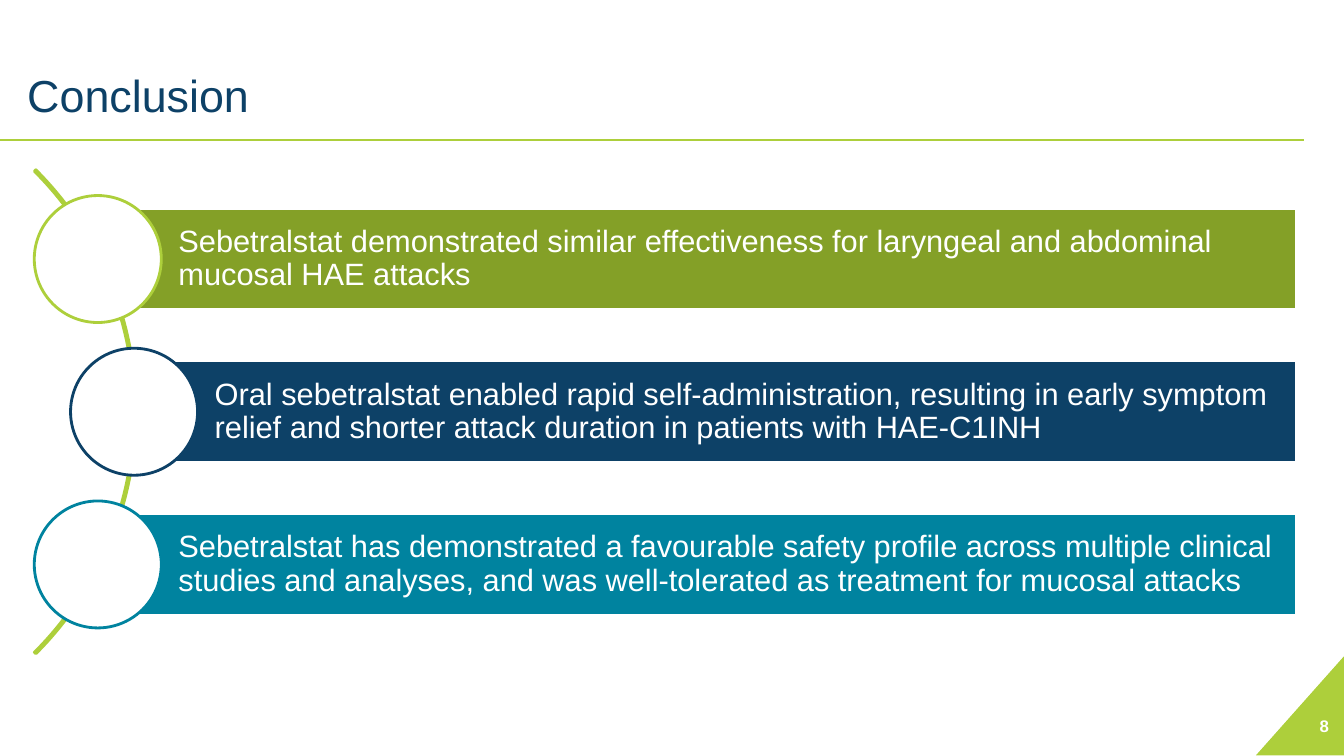
import pptx
import pptx.util
import pptx.dml.color
import pptx.enum.shapes
import pptx.enum.text
from lxml import etree

Inches = pptx.util.Inches
Pt = pptx.util.Pt
MSO_SHAPE = pptx.enum.shapes.MSO_SHAPE
ANCHOR = pptx.enum.text.MSO_ANCHOR
ALIGN = pptx.enum.text.PP_ALIGN

COLOURS = {
    "white": "FFFFFF",
    "lime": "ADCF3B",
    "olive": "84A027",
    "navy": "0D4167",
    "teal": "00839F",
}
CONCLUSIONS = [
    ("Sebetralstat demonstrated similar effectiveness for laryngeal and abdominal "
     "mucosal HAE attacks", 0.97, "olive", "lime"),
    ("Oral sebetralstat enabled rapid self-administration, resulting in early symptom "
     "relief and shorter attack duration in patients with HAE-C1INH", 1.33, "navy", "navy"),
    ("Sebetralstat has demonstrated a favourable safety profile across multiple clinical "
     "studies and analyses, and was well-tolerated as treatment for mucosal attacks",
     0.97, "teal", "teal"),
]
MIDDLE_Y = 4.085
ROW_PITCH = 1.515
BAR_RIGHT = 12.86
BAR_HEIGHT = 1.01
CIRCLE_SIZE = 1.26
ARC_SIZE = 6.79


def rgb(name):
    return pptx.dml.color.RGBColor.from_string(COLOURS[name])


def add_preset(slide, preset, left, top, width, height, fill=None, line=None):
    shape = slide.shapes.add_shape(
        preset, Inches(left), Inches(top), Inches(width), Inches(height))
    shape.shadow.inherit = False
    if fill:
        shape.fill.solid()
        shape.fill.fore_color.rgb = rgb(fill)
    else:
        shape.fill.background()
    if line:
        shape.line.color.rgb = rgb(line)
        shape.line.width = Pt(2)
    else:
        shape.line.fill.background()
    return shape


def write(shape, text, size, colour, anchor, insets, align=ALIGN.LEFT, bold=False):
    frame = shape.text_frame
    frame.word_wrap = True
    frame.auto_size = pptx.enum.text.MSO_AUTO_SIZE.NONE
    frame.vertical_anchor = anchor
    (frame.margin_left, frame.margin_top,
     frame.margin_right, frame.margin_bottom) = map(Inches, insets)
    paragraph = frame.paragraphs[0]
    paragraph.alignment = align
    run = paragraph.add_run()
    run.text = text
    run.font.name = "Arial"
    run.font.size = Pt(size)
    run.font.bold = bold
    run.font.color.rgb = rgb(colour)
    return paragraph


def add_title(slide, text):
    title = slide.shapes.title
    title.left, title.top = Inches(0.27), Inches(0.27)
    title.width, title.height = Inches(11.78), Inches(0.99)
    write(title, text, 32, "navy", ANCHOR.BOTTOM, (0, 0.05, 0, 0.05))


def add_title_rule(slide):
    rule = slide.shapes.add_connector(
        pptx.enum.shapes.MSO_CONNECTOR.STRAIGHT,
        Inches(0), Inches(1.39), Inches(12.93), Inches(1.39))
    rule.line.color.rgb = rgb("lime")
    rule.line.width = Pt(2)
    properties = rule._element.spPr
    etree.SubElement(properties, pptx.oxml.ns.qn("a:effectLst"))


def add_arc(slide):
    arc = add_preset(slide, MSO_SHAPE.BLOCK_ARC, -5.44, MIDDLE_Y - ARC_SIZE / 2,
                     ARC_SIZE, ARC_SIZE, line="lime")
    for index, value in enumerate((189, 27, 0.003)):
        arc.adjustments[index] = value


def add_conclusion(slide, row, text, left, fill, outline):
    centre_y = MIDDLE_Y + (row - 1) * ROW_PITCH
    bar = add_preset(slide, MSO_SHAPE.RECTANGLE, left, centre_y - BAR_HEIGHT / 2,
                     BAR_RIGHT - left, BAR_HEIGHT, fill, "white")
    paragraph = write(bar, text, 22, "white", ANCHOR.MIDDLE, (0.8, 0.06, 0.06, 0.06))
    paragraph.line_spacing = 0.9
    add_preset(slide, MSO_SHAPE.OVAL, left - CIRCLE_SIZE / 2, centre_y - CIRCLE_SIZE / 2,
               CIRCLE_SIZE, CIRCLE_SIZE, "white", outline)


def add_page_corner(slide):
    corner = add_preset(slide, MSO_SHAPE.RIGHT_TRIANGLE, 12.4, 6.56, 0.99, 0.88, "lime")
    corner.rotation = 270


def add_page_number(slide, number):
    box = slide.shapes.add_textbox(Inches(12.62), Inches(7), Inches(0.66), Inches(0.4))
    write(box, number, 12, "white", ANCHOR.MIDDLE, (0.1, 0.05, 0.1, 0.05), ALIGN.RIGHT, True)


def main():
    deck = pptx.Presentation()
    deck.slide_width, deck.slide_height = Inches(13.33), Inches(7.5)
    slide = deck.slides.add_slide(deck.slide_layouts[5])
    add_page_corner(slide)
    add_title_rule(slide)
    add_title(slide, "Conclusion")
    add_arc(slide)
    for row, conclusion in enumerate(CONCLUSIONS):
        add_conclusion(slide, row, *conclusion)
    add_page_number(slide, "8")
    deck.save("out.pptx")


if __name__ == "__main__":
    main()
